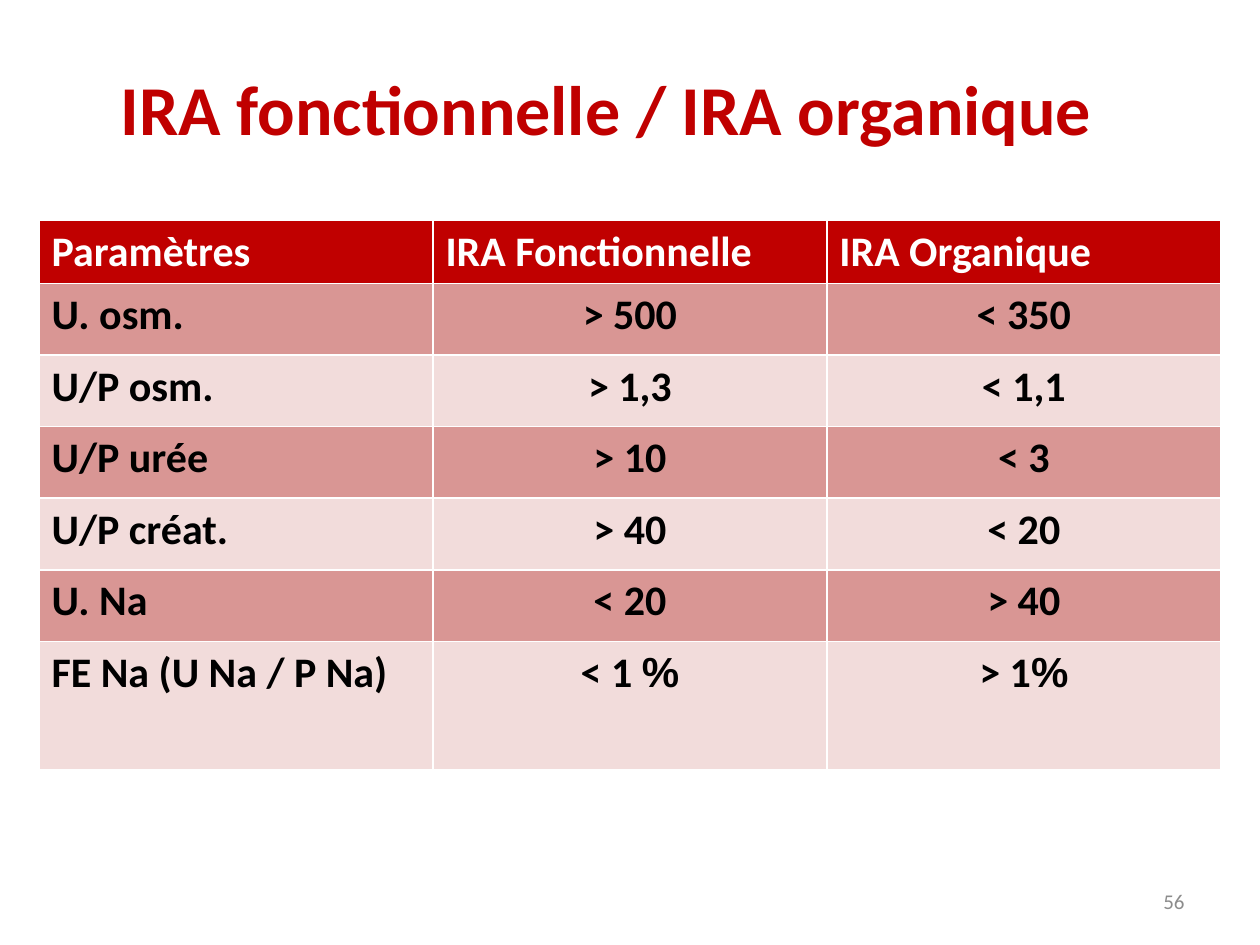
from pptx import Presentation, util as u
from pptx.dml.color import RGBColor
from pptx.enum import text

WIDTH, HEIGHT = u.Inches(10), u.Inches(7.5)
RED = RGBColor(0xC0, 0x00, 0x00)
ROSE = RGBColor(0xD9, 0x96, 0x94)
BLUSH = RGBColor(0xF2, 0xDC, 0xDB)
WHITE = RGBColor(0xFF, 0xFF, 0xFF)
BLACK = RGBColor(0x00, 0x00, 0x00)
GREY = RGBColor(0x8C, 0x8C, 0x8C)
LEFT, CENTER, RIGHT = text.PP_ALIGN.LEFT, text.PP_ALIGN.CENTER, text.PP_ALIGN.RIGHT

CRITERIA = [
    ("Paramètres", "IRA Fonctionnelle", "IRA Organique"),
    ("U. osm.", "> 500", "< 350"),
    ("U/P osm.", "> 1,3", "< 1,1"),
    ("U/P urée", "> 10", "< 3"),
    ("U/P créat.", "> 40", "< 20"),
    ("U. Na", "< 20", "> 40"),
    ("FE Na (U Na / P Na)", "< 1 %", "> 1%"),
]
HEADER_ROW, BODY_ROW, LAST_ROW = 0.49, 0.57, 1.02


def share(left, top, width, height):
    """Turn shares of the slide into a box of lengths."""
    return int(left * WIDTH), int(top * HEIGHT), int(width * WIDTH), int(height * HEIGHT)


def write(para, words, size, color, bold, align):
    """Fill a paragraph, setting percent signs in Arial."""
    para.alignment = align
    font = para.font
    font.name, font.size, font.bold = "Calibri", u.Pt(size), bold
    font.color.rgb = color
    number, sign, _ = words.partition("%")
    for part, face in ((number, "Calibri"), (sign, "Arial")):
        if part:
            span = para.add_run()
            span.text = part
            span.font.name, span.font.size, span.font.bold = face, u.Pt(size), bold
            span.font.color.rgb = color


def add_label(page, box, words, size, color, bold, align):
    """Place one line of text, centred vertically in its box."""
    frame = page.shapes.add_textbox(*box).text_frame
    frame.word_wrap = True
    frame.vertical_anchor = text.MSO_ANCHOR.MIDDLE
    write(frame.paragraphs[0], words, size, color, bold, align)


def add_criteria(page, box):
    """Place the table with a red header and banded rows."""
    table = page.shapes.add_table(len(CRITERIA), len(CRITERIA[0]), *box).table
    shares = [HEADER_ROW] + [BODY_ROW] * (len(CRITERIA) - 2) + [LAST_ROW]
    for row, part in zip(table.rows, shares):
        row.height = int(box[3] * part / sum(shares))
    for i, entries in enumerate(CRITERIA):
        for j, words in enumerate(entries):
            cell = table.cell(i, j)
            cell.fill.solid()
            cell.fill.fore_color.rgb = RED if i == 0 else ROSE if i % 2 else BLUSH
            write(cell.text_frame.paragraphs[0], words, 24,
                  BLACK if i else WHITE, True, CENTER if i and j else LEFT)


def main():
    """Build and save the slide."""
    deck = Presentation()
    deck.slide_width, deck.slide_height = WIDTH, HEIGHT
    page = deck.slides.add_slide(deck.slide_layouts[6])
    add_label(page, share(0.016, 0.03, 0.93, 0.167),
              "IRA fonctionnelle / IRA organique", 40, RED, True, CENTER)
    add_criteria(page, share(0.031, 0.233, 0.938, 0.58))
    add_label(page, share(0.717, 0.927, 0.233, 0.053), "56", 12, GREY, False, RIGHT)
    deck.save("out.pptx")


if __name__ == "__main__":
    main()
